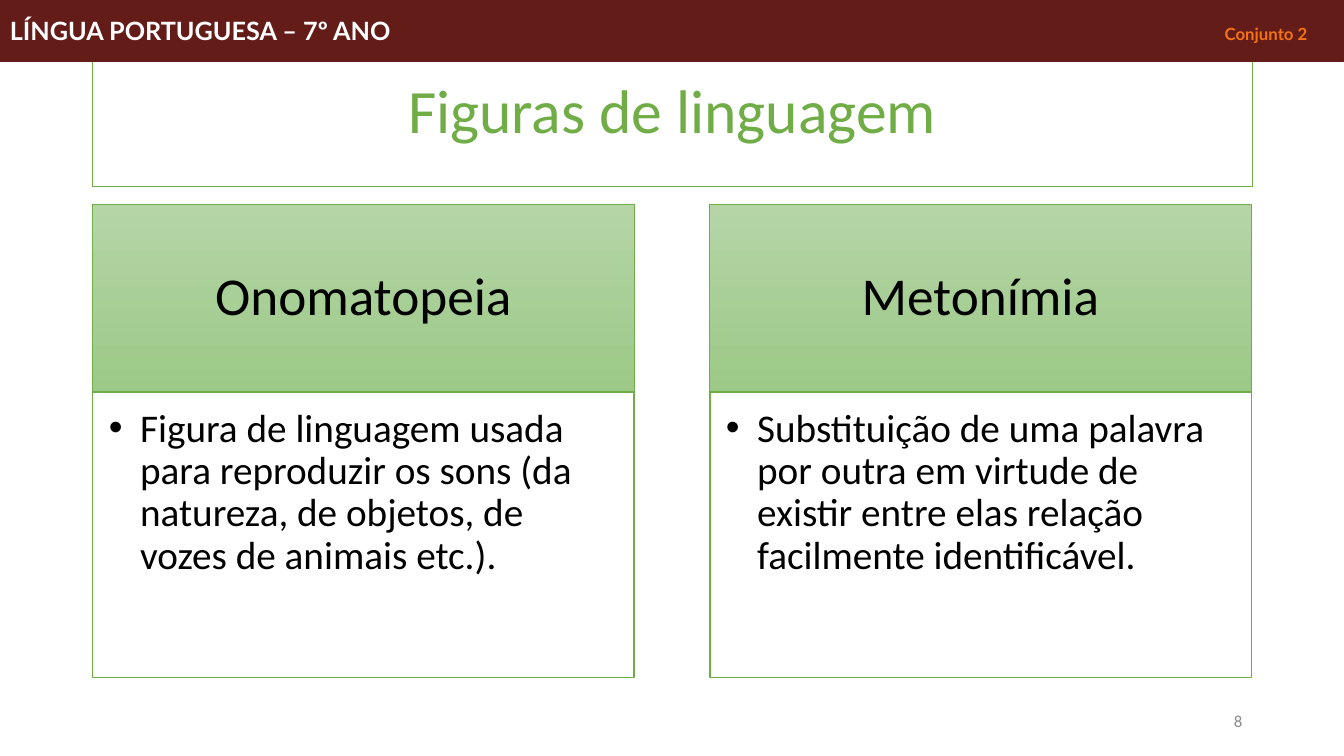
from lxml.etree import SubElement
from pptx import Presentation
from pptx.dml.color import RGBColor
from pptx.enum.shapes import MSO_SHAPE
from pptx.enum.text import MSO_ANCHOR as ANCHOR, MSO_AUTO_SIZE as AUTO, PP_ALIGN as ALIGN
from pptx.oxml.ns import qn
from pptx.util import Inches, Pt

SLIDE_W, SLIDE_H = 13.33, 7.5
MARGIN, CONTENT_W = 0.92, 11.5
COL_W, COL_STEP = 5.37, 6.12
HEAD_TOP, HEAD_H, BODY_H = 2.03, 1.86, 2.83
GREEN, MAROON, ORANGE = "70AD47", "631C18", "F47116"
WHITE, BLACK, GRAY = "FFFFFF", "000000", "8C8C8C"

COLUMNS = [
    ("Onomatopeia",
     "Figura de linguagem usada para reproduzir os sons "
     "(da natureza, de objetos, de vozes de animais etc.)."),
    ("Metonímia",
     "Substituição de uma palavra por outra em virtude de "
     "existir entre elas relação facilmente identificável."),
]


def rgb(hex_color):
    return RGBColor.from_string(hex_color)


def set_attrs(obj, values):
    for name, value in values.items():
        setattr(obj, name, value)


def place(sp, left, top, width, height):
    set_attrs(sp, {"left": Inches(left), "top": Inches(top),
                   "width": Inches(width), "height": Inches(height)})


def outline(sp, color, width):
    sp.line.color.rgb = rgb(color)
    sp.line.width = Pt(width)


def fill_solid(sp, color):
    sp.fill.solid()
    sp.fill.fore_color.rgb = rgb(color)


def fill_gradient(sp, colors):
    sp.fill.gradient()
    sp.fill.gradient_angle = 270
    for stop, color in zip(sp.fill.gradient_stops, colors):
        stop.color.rgb = rgb(color)


def set_frame(sp, anchor, insets=(0.1, 0.05, 0.1, 0.05)):
    tf = sp.text_frame
    sides = ("margin_left", "margin_top", "margin_right", "margin_bottom")
    set_attrs(tf, dict(zip(sides, map(Inches, insets))))
    set_attrs(tf, {"word_wrap": True, "auto_size": AUTO.NONE, "vertical_anchor": anchor})
    return tf.paragraphs[0]


def add_run(p, text, size, color, font="Calibri", bold=False):
    r = p.add_run()
    r.text = text
    set_attrs(r.font, {"name": font, "size": Pt(size), "bold": bold})
    r.font.color.rgb = rgb(color)


def set_spacing(p, align, line=1.0):
    set_attrs(p, {"alignment": align, "line_spacing": line,
                  "space_before": Pt(0), "space_after": Pt(0)})


def add_bullet(p, indent):
    pPr = p._p.get_or_add_pPr()
    pPr.set("marL", str(Inches(indent)))
    pPr.set("indent", str(-Inches(indent)))
    SubElement(pPr, qn("a:buChar"), char="•")


def add_right_tab(p, pos):
    tabs = SubElement(p._p.get_or_add_pPr(), qn("a:tabLst"))
    SubElement(tabs, qn("a:tab"), pos=str(Inches(pos)), algn="r")


def build_title(sp, text):
    place(sp, MARGIN, 0.4, CONTENT_W, 1.45)
    fill_solid(sp, WHITE)
    outline(sp, GREEN, 1)
    p = set_frame(sp, ANCHOR.MIDDLE)
    set_spacing(p, ALIGN.CENTER, 0.9)
    add_run(p, text, 44, GREEN)


def build_heading(sp, left, text):
    place(sp, left, HEAD_TOP, COL_W, HEAD_H)
    fill_gradient(sp, ("B5D5A7", "9CC987"))
    outline(sp, GREEN, 0.5)
    p = set_frame(sp, ANCHOR.MIDDLE, (0.3, 0.17, 0.3, 0.17))
    set_spacing(p, ALIGN.CENTER, 0.9)
    add_run(p, text, 38, BLACK)


def build_definition(sp, left, text):
    place(sp, left, HEAD_TOP + HEAD_H, COL_W, BODY_H)
    fill_solid(sp, WHITE)
    outline(sp, GREEN, 1)
    p = set_frame(sp, ANCHOR.TOP, (0.16, 0.16, 0.22, 0.24))
    set_spacing(p, ALIGN.LEFT, 0.9)
    add_bullet(p, 0.31)
    add_run(p, text, 28, BLACK)


def add_page_number(s, number):
    width = 3
    sp = s.shapes.add_textbox(0, 0, 0, 0)
    place(sp, MARGIN + CONTENT_W - width, 6.95, width, 0.4)
    p = set_frame(sp, ANCHOR.MIDDLE)
    set_spacing(p, ALIGN.RIGHT)
    add_run(p, number, 12, GRAY)


def add_banner(s, subject, label):
    sp = s.shapes.add_shape(MSO_SHAPE.RECTANGLE, 0, 0, 0, 0)
    place(sp, 0, 0, SLIDE_W, 0.61)
    sp.shadow.inherit = False
    fill_solid(sp, MAROON)
    outline(sp, MAROON, 0.75)
    p = set_frame(sp, ANCHOR.MIDDLE)
    set_spacing(p, ALIGN.LEFT)
    add_right_tab(p, 12.87)
    add_run(p, subject + "\t", 18, WHITE, "Lato", True)
    add_run(p, label, 12, ORANGE, "Lato", True)


def main():
    prs = Presentation()
    set_attrs(prs, {"slide_width": Inches(SLIDE_W), "slide_height": Inches(SLIDE_H)})
    s = prs.slides.add_slide(prs.slide_layouts.get_by_name("Comparison"))
    title, *boxes = s.placeholders
    build_title(title, "Figuras de linguagem")
    for i, (name, definition) in enumerate(COLUMNS):
        left = MARGIN + i * COL_STEP
        build_heading(boxes[2 * i], left, name)
        build_definition(boxes[2 * i + 1], left, definition)
    add_page_number(s, "8")
    add_banner(s, "LÍNGUA PORTUGUESA – 7º ANO", "Conjunto 2")
    prs.save("out.pptx")


if __name__ == "__main__":
    main()
